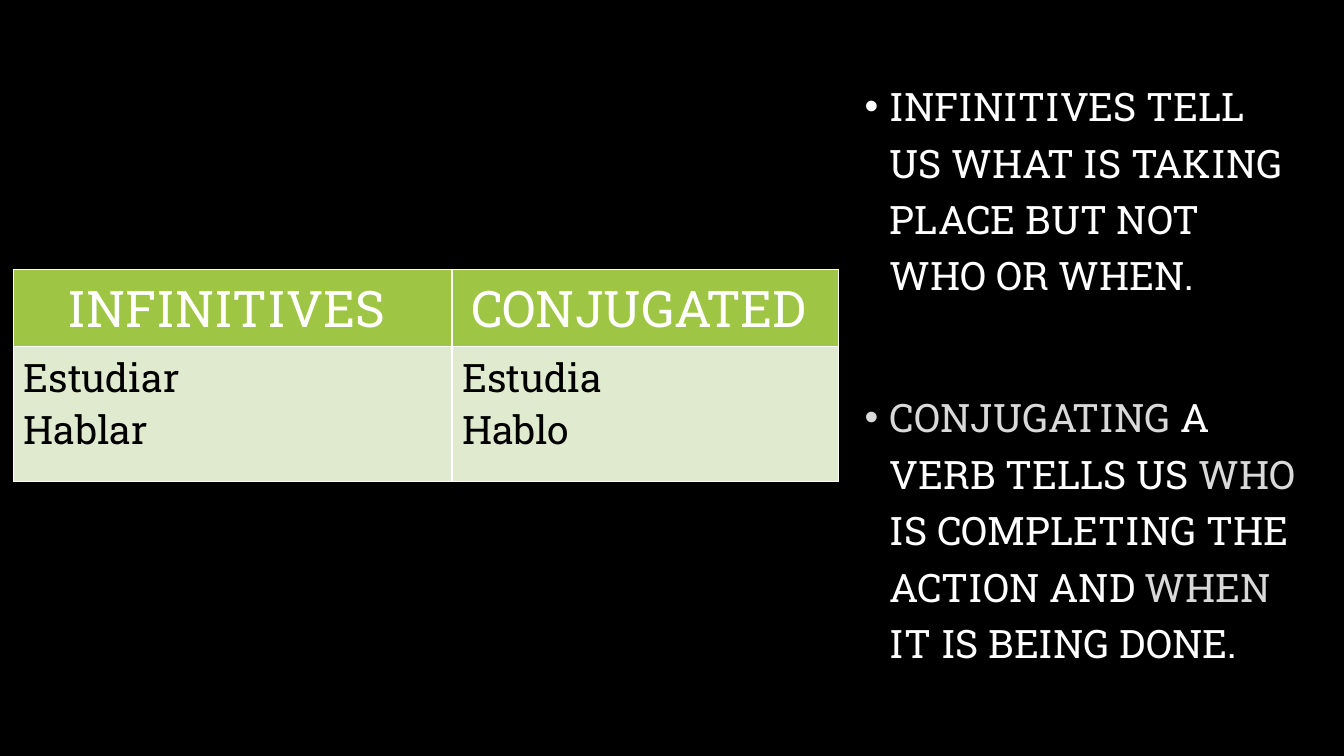
import dataclasses

import pptx
import pptx.dml.color
import pptx.enum.text
import pptx.oxml
import pptx.oxml.ns
import pptx.util

WIDTH, HEIGHT = 13.33, 7.5
NS = pptx.oxml.ns.nsdecls("a")


@dataclasses.dataclass(frozen=True)
class Theme:
    """Colours, font and type sizes of the slide."""
    font: str = "Roboto Slab"
    heading: int = 36
    body: int = 28
    back: str = "000000"
    light: str = "FFFFFF"
    accent: str = "D9D9D9"
    dark: str = "000000"
    header_fill: str = "9EC544"
    body_fill: str = "DFEACF"


THEME = Theme()
COLUMNS = (4.35, 3.83)
ROWS = (0.76, 1.34)
HEADINGS = ("INFINITIVES ", "CONJUGATED ")
VERBS = (("Estudiar", "Hablar"), ("Estudia", "Hablo"))
NOTES = (
    (("INFINITIVES TELL US WHAT IS TAKING PLACE BUT NOT WHO OR WHEN.", THEME.light),),
    (
        ("CONJUGATING", THEME.accent),
        (" A VERB TELLS US ", THEME.light),
        ("WHO", THEME.accent),
        (" IS COMPLETING THE ACTION AND ", THEME.light),
        ("WHEN", THEME.accent),
        (" IT IS BEING DONE.", THEME.light),
    ),
)


def apply(target, values):
    """Set each named attribute on the target."""
    for name, value in values.items():
        setattr(target, name, value)


def area(left, top, width, height):
    """Turn shares of the slide's size into lengths."""
    shares = (left * WIDTH, top * HEIGHT, width * WIDTH, height * HEIGHT)
    return [pptx.util.Inches(share) for share in shares]


def paint(fill, colour):
    """Fill with one solid colour."""
    fill.solid()
    fill.fore_color.rgb = pptx.dml.color.RGBColor.from_string(colour)


def add_span(para, text, size, colour):
    """Append one formatted run to a paragraph."""
    span = para.add_run()
    span.text = text
    apply(span.font, {"name": THEME.font, "size": pptx.util.Pt(size)})
    span.font.color.rgb = pptx.dml.color.RGBColor.from_string(colour)


def paragraphs(frame, count):
    """Return the given number of paragraphs in a text frame."""
    return [frame.paragraphs[0]] + [frame.add_paragraph() for _ in range(count - 1)]


def add_bullet(para):
    """Give a paragraph a hanging bullet."""
    properties = para._p.get_or_add_pPr()
    indent = pptx.util.Inches(0.25)
    properties.set("marL", str(indent))
    properties.set("indent", str(-indent))
    properties.append(pptx.oxml.parse_xml(f'<a:buFont {NS} typeface="Arial"/>'))
    properties.append(pptx.oxml.parse_xml(f'<a:buChar {NS} char="•"/>'))


def add_notes(page, notes, place):
    """Add the bulleted notes, each made of coloured spans."""
    box = page.shapes.add_textbox(*place)
    box.text_frame.word_wrap = True
    for index, (para, spans) in enumerate(zip(paragraphs(box.text_frame, len(notes)), notes)):
        apply(para, {"line_spacing": 1.2, "space_before": pptx.util.Pt(61 * index)})
        add_bullet(para)
        for text, colour in spans:
            add_span(para, text, THEME.body, colour)


def add_borders(cell):
    """Draw thin light borders on all four sides."""
    properties = cell._tc.get_or_add_tcPr()
    for index, side in enumerate(("lnL", "lnR", "lnT", "lnB")):
        properties.insert(index, pptx.oxml.parse_xml(
            f'<a:{side} {NS} w="{pptx.util.Pt(1)}"><a:solidFill>'
            f'<a:srgbClr val="{THEME.light}"/></a:solidFill></a:{side}>'))


def fill_cell(cell, lines, style):
    """Write the lines of a cell in the given style."""
    paint(cell.fill, style["fill"])
    add_borders(cell)
    for para, line in zip(paragraphs(cell.text_frame, len(lines)), lines):
        para.alignment = style["align"]
        add_span(para, line, style["size"], style["colour"])


def add_verb_table(page, place):
    """Add the table that sets infinitives beside conjugated verbs."""
    table = page.shapes.add_table(len(ROWS), len(COLUMNS), *place).table
    align = pptx.enum.text.PP_ALIGN
    header = {"fill": THEME.header_fill, "align": align.CENTER,
              "size": THEME.heading, "colour": THEME.light}
    body = {"fill": THEME.body_fill, "align": align.LEFT,
            "size": THEME.body, "colour": THEME.dark}
    for row, height in zip(table.rows, ROWS):
        row.height = pptx.util.Inches(height)
    for index, width in enumerate(COLUMNS):
        table.columns[index].width = pptx.util.Inches(width)
        fill_cell(table.cell(0, index), (HEADINGS[index],), header)
        fill_cell(table.cell(1, index), VERBS[index], body)


def main():
    """Build the slide and save it."""
    deck = pptx.Presentation()
    apply(deck, {"slide_width": pptx.util.Inches(WIDTH),
                 "slide_height": pptx.util.Inches(HEIGHT)})
    page = deck.slides.add_slide(deck.slide_layouts[6])
    paint(page.background.fill, THEME.back)
    add_notes(page, NOTES, area(0.636, 0.09, 0.338, 0.587))
    add_verb_table(page, area(0.01, 0.357, sum(COLUMNS) / WIDTH, sum(ROWS) / HEIGHT))
    deck.save("out.pptx")


if __name__ == "__main__":
    main()
